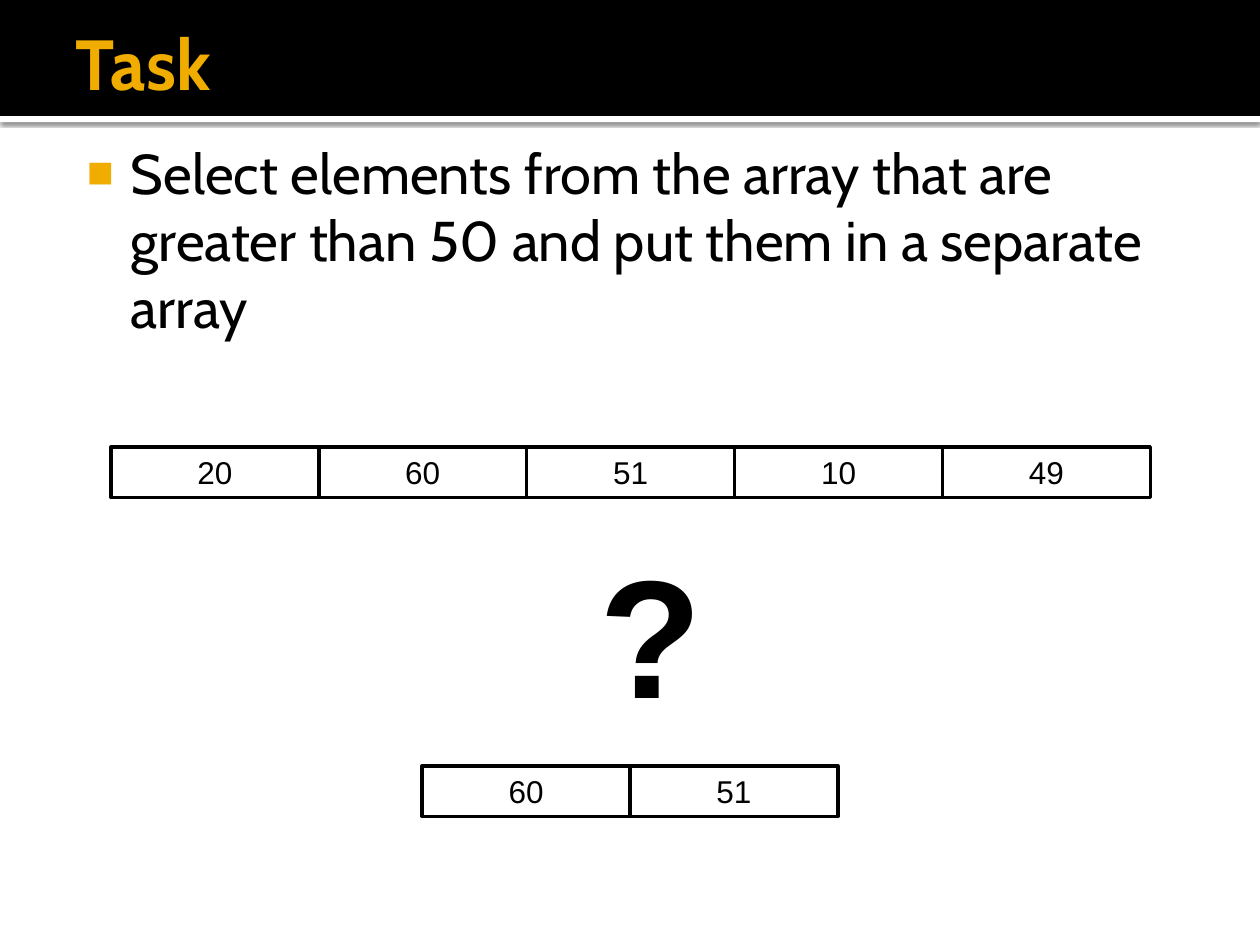
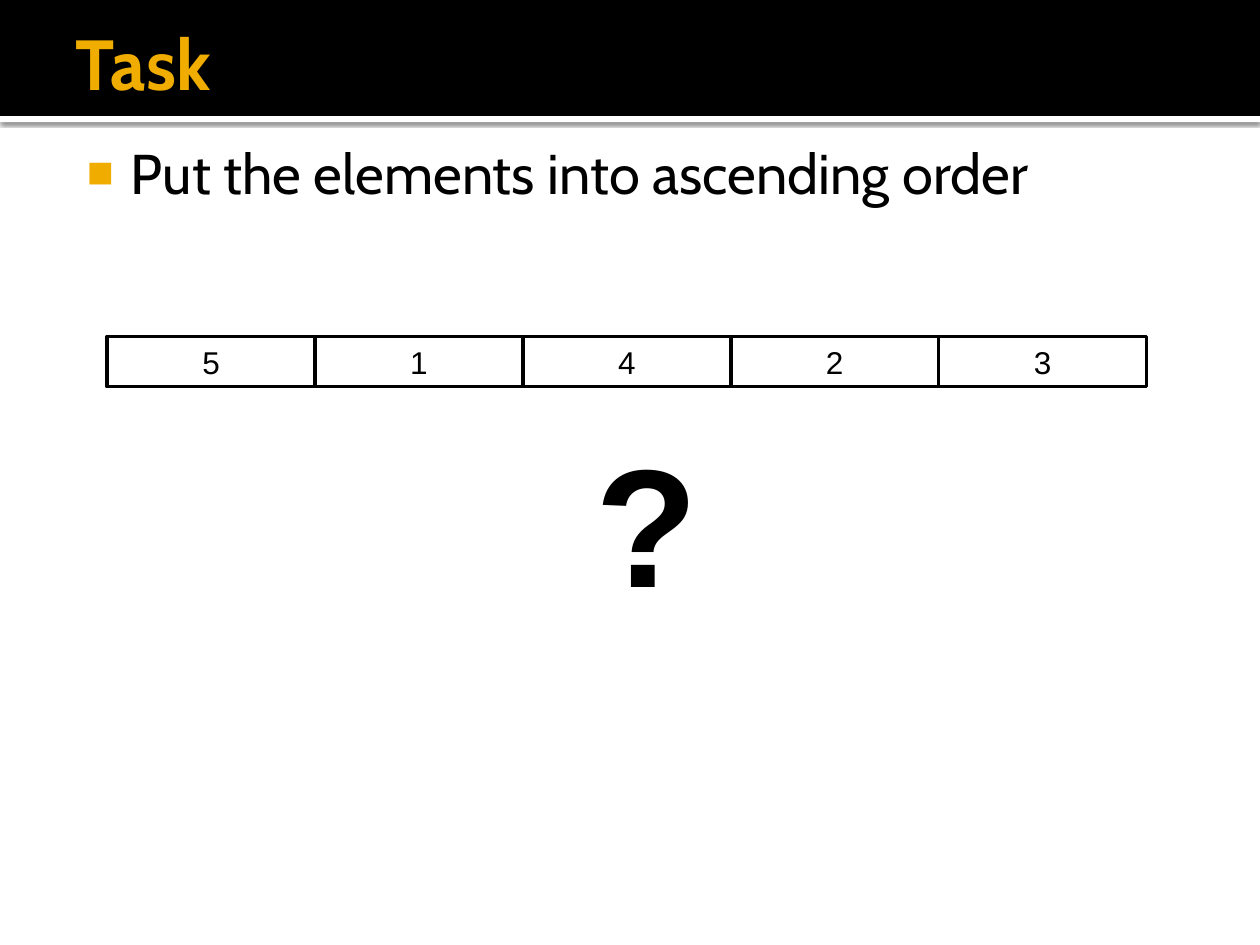
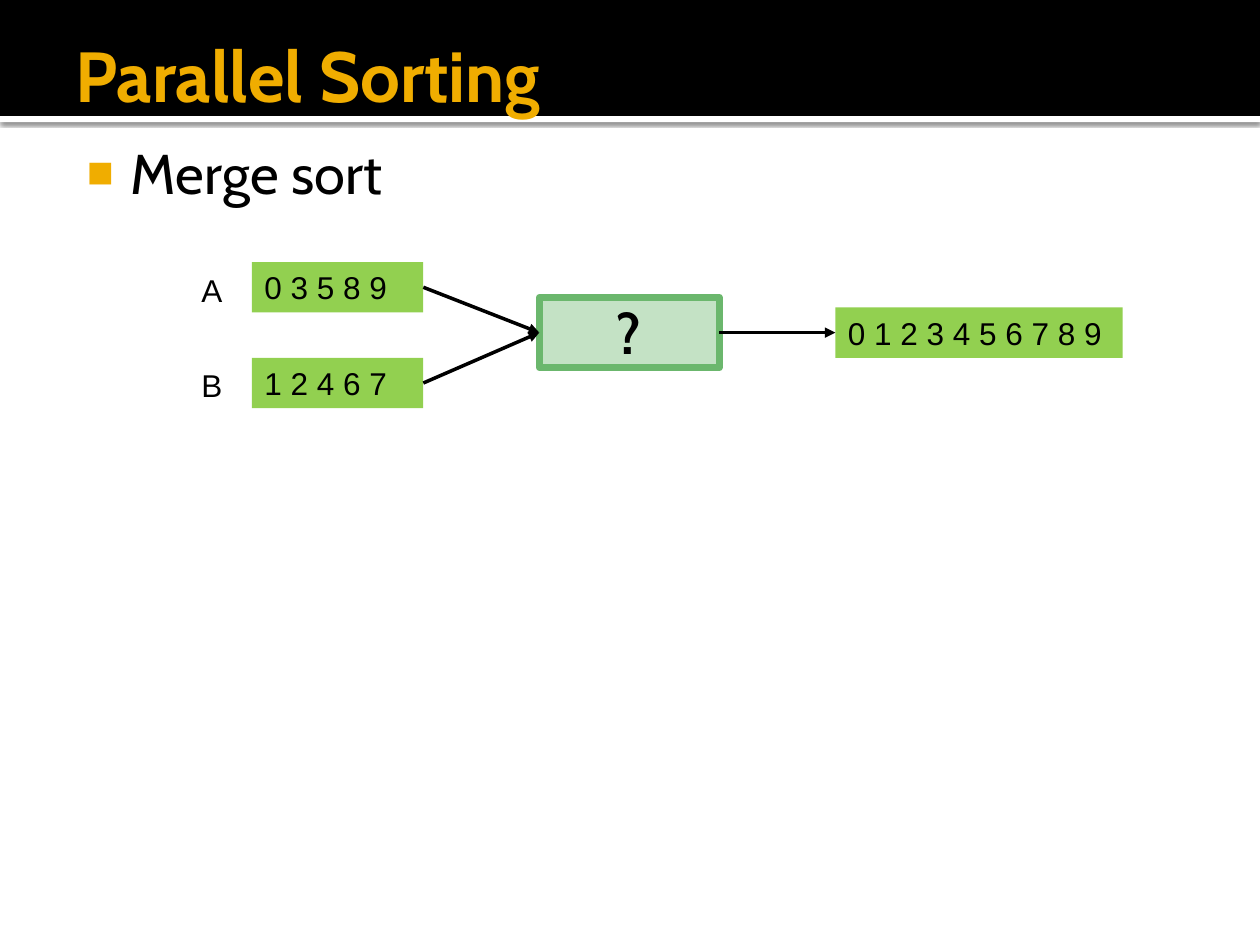
from dataclasses import dataclass

from lxml import etree
from pptx import Presentation, oxml
from pptx import util as u
from pptx.dml.color import RGBColor
from pptx.enum import shapes, text
from pptx.oxml.ns import qn

Inches, Pt = u.Inches, u.Pt


@dataclass(frozen=True)
class Theme:
    """Colours as RRGGBB, sizes and line widths in points."""
    black: str = "000000"
    white: str = "FFFFFF"
    gold: str = "F0AD00"
    lime: str = "92D050"
    pale_green: str = "C4E2C5"
    green: str = "6BB76D"
    head_font: str = "Cabin"
    data_font: str = "Arial"
    title_size: float = 40.5
    body_size: float = 32
    data_size: float = 18
    mark_size: float = 96
    line: float = 2
    frame: float = 3.78


class SlideBuilder:
    CELL_WIDTH, ROW_HEIGHT = 1.65, 0.4

    def __init__(self, deck, theme):
        self.deck, self.theme, self.page = deck, theme, None

    # Page with its band, title and bullet
    def start_page(self, title, bullet, title_top=0.08, body_height=6.0):
        theme = self.theme
        self.page = self.deck.slides.add_slide(self.deck.slide_layouts[6])
        stripe = self.box(0, 0.92, 10, 0.05, fill=theme.white)
        stripe._element.spPr.find(qn("a:effectLst")).append(oxml.parse_xml(
            '<a:outerShdw xmlns:a="http://schemas.openxmlformats.org/drawingml/2006/main"'
            f' blurRad="{Pt(2.5)}" dist="{Pt(0.8)}" dir="5400000" rotWithShape="0">'
            f'<a:srgbClr val="{theme.black}"><a:alpha val="60000"/></a:srgbClr></a:outerShdw>'))
        self.box(0, 0, 10, 0.92, fill=theme.black)

        heading = self.text_box(0.5, title_top, 9, 0.83)
        self.set_text(heading, title, theme.title_size, theme.head_font, theme.gold, bold=True,
                      anchor=text.MSO_ANCHOR.MIDDLE, insets=(0.1, 0.05, 0.05, 0.05))

        body = self.text_box(0.5, 1, 9, body_height)
        para = self.set_text(body, bullet, theme.body_size, theme.head_font,
                             insets=(0.06, 0.1, 0.1, 0.05))
        self.add_bullet(para)

    def add_bullet(self, para):
        props = para._p.get_or_add_pPr()
        props.set("marL", str(Inches(0.48)))
        props.set("indent", str(Inches(-0.35)))
        # Bullet settings come before the paragraph's font defaults
        colour = etree.Element(qn("a:buClr"))
        etree.SubElement(colour, qn("a:srgbClr"), val=self.theme.gold)
        settings = [colour,
                    etree.Element(qn("a:buSzPct"), val="80000"),
                    etree.Element(qn("a:buFont"), typeface=self.theme.data_font),
                    etree.Element(qn("a:buChar"), char="■")]
        for position, setting in enumerate(settings):
            props.insert(position, setting)

    # Basic elements
    def box(self, left, top, width, height, fill=None, line=None, weight=None, parent=None):
        shape = (parent or self.page).shapes.add_shape(
            shapes.MSO_SHAPE.RECTANGLE, Inches(left), Inches(top), Inches(width), Inches(height))
        shape.shadow.inherit = False
        for paint, colour in ((shape.fill, fill), (shape.line.fill, line)):
            if colour:
                paint.solid()
                paint.fore_color.rgb = RGBColor.from_string(colour)
            else:
                paint.background()
        if weight:
            shape.line.width = Pt(weight)
        return shape

    def text_box(self, left, top, width, height):
        return self.page.shapes.add_textbox(
            Inches(left), Inches(top), Inches(width), Inches(height))

    def set_text(self, shape, words, size, font, colour=None, bold=False,
                 align=text.PP_ALIGN.LEFT, anchor=text.MSO_ANCHOR.TOP,
                 insets=(0.1, 0.05, 0.1, 0.05)):
        frame = shape.text_frame
        frame.word_wrap = True
        frame.vertical_anchor = anchor
        (frame.margin_left, frame.margin_top,
         frame.margin_right, frame.margin_bottom) = map(Inches, insets)
        para = frame.paragraphs[0]
        para.text = words
        para.alignment = align
        para.font.size, para.font.name, para.font.bold = Pt(size), font, bold
        para.font.color.rgb = RGBColor.from_string(colour or self.theme.black)
        return para

    def set_data(self, shape, words, align=text.PP_ALIGN.LEFT):
        self.set_text(shape, words, self.theme.data_size, self.theme.data_font, align=align)

    # Diagram elements
    def array(self, left, top, values):
        group = self.page.shapes.add_group_shape()
        for index, value in enumerate(values):
            cell = self.box(left + index * self.CELL_WIDTH, top, self.CELL_WIDTH,
                            self.ROW_HEIGHT, line=self.theme.black,
                            weight=self.theme.line, parent=group)
            self.set_data(cell, str(value), text.PP_ALIGN.CENTER)

    def question_mark(self, left, top):
        self.set_text(self.text_box(left, top, 0.65, 1.72), "?", self.theme.mark_size,
                      self.theme.data_font, bold=True, align=text.PP_ALIGN.CENTER)

    def sequence(self, left, top, width, values):
        shape = self.box(left, top, width, self.ROW_HEIGHT, fill=self.theme.lime)
        self.set_data(shape, values)
        return shape

    def process(self, left, top, width, height, words):
        shape = self.box(left, top, width, height, self.theme.pale_green,
                         self.theme.green, self.theme.frame)
        self.set_text(shape, words, self.theme.body_size, self.theme.head_font, bold=True,
                      align=text.PP_ALIGN.CENTER, anchor=text.MSO_ANCHOR.MIDDLE)
        return shape

    def label(self, left, top, words):
        self.set_data(self.text_box(left, top, 0.63, self.ROW_HEIGHT), words)

    def arrow(self, source, target):
        link = self.page.shapes.add_connector(shapes.MSO_CONNECTOR.STRAIGHT, 0, 0, 0, 0)
        link.begin_connect(source, 3)
        link.end_connect(target, 1)
        link.line.color.rgb = RGBColor.from_string(self.theme.black)
        link.line.width = Pt(self.theme.line)
        properties = link._element.spPr
        etree.SubElement(properties.find(qn("a:ln")), qn("a:tailEnd"), type="triangle")
        etree.SubElement(properties, qn("a:effectLst"))


def main():
    deck = Presentation()
    deck.slide_width, deck.slide_height = Inches(10), Inches(7.5)
    slide = SlideBuilder(deck, Theme())

    # Selecting elements
    slide.start_page("Task", "Select elements from the array that are greater than 50 "
                             "and put them in a separate array")
    slide.question_mark(4.66, 4.16)
    slide.array(0.88, 3.55, [20, 60, 51, 10, 49])
    slide.array(3.35, 6.08, [60, 51])

    # Ordering elements
    slide.start_page("Task", "Put the elements into ascending order", body_height=1.08)
    slide.question_mark(4.63, 3.28)
    slide.array(0.85, 2.67, [5, 1, 4, 2, 3])

    # Merging two sorted sequences
    slide.start_page("Parallel Sorting", "Merge sort", title_top=0.17, body_height=0.92)
    merged = slide.sequence(6.63, 2.44, 2.28, "0 1 2 3 4 5 6 7 8 9")
    merge = slide.process(4.28, 2.36, 1.43, 0.56, "?")
    for name, top, values in (("A", 2.08, "0 3 5 8 9"), ("B", 2.84, "1 2 4 6 7")):
        slide.arrow(slide.sequence(2, top, 1.36, values), merge)
        slide.label(1.5, top + 0.02, name)
    slide.arrow(merge, merged)

    deck.save("out.pptx")


if __name__ == "__main__":
    main()
